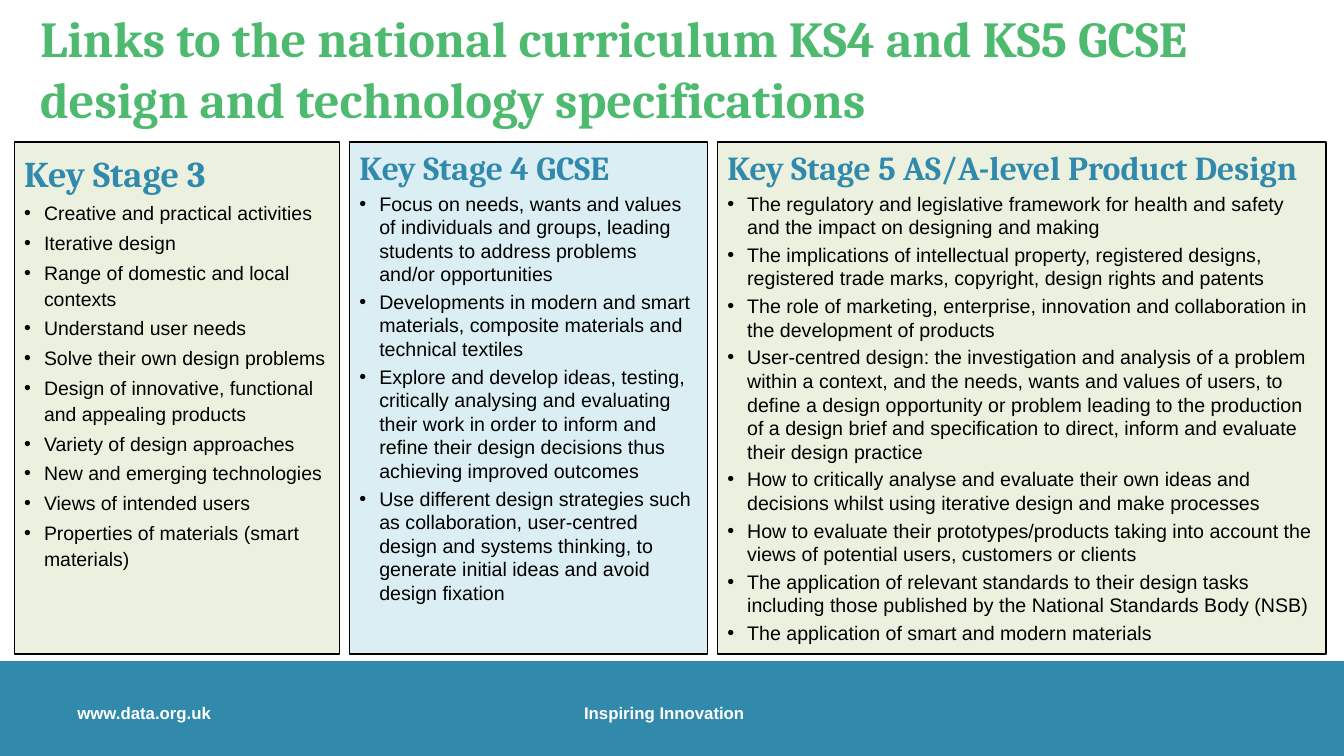
from dataclasses import dataclass

from lxml.etree import SubElement
from pptx import Presentation
from pptx.dml.color import RGBColor
from pptx.enum.shapes import MSO_SHAPE
from pptx.enum.text import MSO_ANCHOR, PP_ALIGN
from pptx.oxml.ns import qn
from pptx.util import Cm, Pt


@dataclass(frozen=True)
class Theme:
    blue: str = "318AAC"
    green: str = "4EBA6F"
    pale_green: str = "EBF1DE"
    pale_blue: str = "DBEEF4"
    black: str = "000000"
    white: str = "FFFFFF"
    heading_font: str = "Cambria"
    body_font: str = "Arial"
    title_size: float = 36
    heading_size: float = 24
    body_size: float = 14
    footer_size: float = 12


THEME = Theme()
SLIDE_WIDTH, SLIDE_HEIGHT = 33.87, 19.05
COLUMN_LEFT, COLUMN_TOP, COLUMN_HEIGHT, COLUMN_GAP = 0.36, 3.58, 12.9, 0.25
BULLET_INDENT = 0.5

COLUMNS = [
    dict(
        width=8.2, fill=THEME.pale_green, heading="Key Stage 3",
        heading_size=25.9, body_size=13.9, line_spacing=1.1,
        points=[
            "Creative and practical activities",
            "Iterative design",
            "Range of domestic and local contexts",
            "Understand user needs",
            "Solve their own design problems",
            "Design of innovative, functional and appealing products",
            "Variety of design approaches",
            "New and emerging technologies",
            "Views of intended users",
            "Properties of materials (smart materials)",
        ],
    ),
    dict(
        width=9.02, fill=THEME.pale_blue, heading="Key Stage 4 GCSE",
        points=[
            "Focus on needs, wants and values of individuals and groups, leading students to "
            "address problems and/or opportunities",
            "Developments in modern and smart materials, composite materials and technical textiles",
            "Explore and develop ideas, testing, critically analysing and evaluating their work in "
            "order to inform and refine their design decisions thus achieving improved outcomes",
            "Use different design strategies such as collaboration, user-centred design and systems "
            "thinking, to generate initial ideas and avoid design fixation",
        ],
    ),
    dict(
        width=15.34, fill=THEME.pale_green, heading="Key Stage 5 AS/A-level Product Design",
        points=[
            "The regulatory and legislative framework for health and safety and the impact on "
            "designing and making",
            "The implications of intellectual property, registered designs, registered trade marks, "
            "copyright, design rights and patents",
            "The role of marketing, enterprise, innovation and collaboration in the development of "
            "products",
            "User-centred design: the investigation and analysis of a problem within a context, and "
            "the needs, wants and values of users, to define a design opportunity or problem leading "
            "to the production of a design brief and specification to direct, inform and evaluate "
            "their design practice",
            "How to critically analyse and evaluate their own ideas and decisions whilst using "
            "iterative design and make processes",
            "How to evaluate their prototypes/products taking into account the views of potential "
            "users, customers or clients",
            "The application of relevant standards to their design tasks including those published "
            "by the National Standards Body (NSB)",
            "The application of smart and modern materials",
        ],
    ),
]


def write_text(paragraph, text, *, font, size, color, bold=False, bullet=False,
               line_spacing=None, space_before=0):
    paragraph.alignment = PP_ALIGN.LEFT
    paragraph.space_before = Pt(space_before)
    if line_spacing:
        paragraph.line_spacing = line_spacing
    if bullet:
        properties = paragraph._p.get_or_add_pPr()
        properties.set("marL", str(Cm(BULLET_INDENT)))
        properties.set("indent", str(-Cm(BULLET_INDENT)))
        SubElement(properties, qn("a:buFont"), typeface=THEME.body_font)
        SubElement(properties, qn("a:buChar"), char="•")
    run = paragraph.add_run()
    run.text = text
    run.font.name = font
    run.font.size = Pt(size)
    run.font.bold = bold
    run.font.color.rgb = RGBColor.from_string(color)


def add_rectangle(slide, left, top, width, height, fill, line=None):
    shape = slide.shapes.add_shape(
        MSO_SHAPE.RECTANGLE, Cm(left), Cm(top), Cm(width), Cm(height))
    shape.shadow.inherit = False
    shape.fill.solid()
    shape.fill.fore_color.rgb = RGBColor.from_string(fill)
    if line:
        shape.line.color.rgb = RGBColor.from_string(line)
        shape.line.width = Pt(1)
    else:
        shape.line.fill.background()
    return shape


def add_label(slide, text, left, top, width, height, anchor=MSO_ANCHOR.TOP, **text_format):
    frame = slide.shapes.add_textbox(Cm(left), Cm(top), Cm(width), Cm(height)).text_frame
    frame.word_wrap = True
    frame.vertical_anchor = anchor
    write_text(frame.paragraphs[0], text, bold=True, **text_format)


def add_title(slide, left, top, width, height):
    add_label(slide, "Links to the national curriculum KS4 and KS5 GCSE design and technology "
              "specifications", left, top, width, height, anchor=MSO_ANCHOR.MIDDLE,
              font=THEME.heading_font, size=THEME.title_size, color=THEME.green)


def add_column(slide, left, top, width, height, *, fill, heading, points,
               heading_size=THEME.heading_size, body_size=THEME.body_size, line_spacing=None):
    frame = add_rectangle(slide, left, top, width, height, fill, THEME.black).text_frame
    frame.word_wrap = True
    frame.vertical_anchor = MSO_ANCHOR.TOP
    write_text(frame.paragraphs[0], heading, font=THEME.heading_font, size=heading_size,
               color=THEME.blue, bold=True, line_spacing=line_spacing)
    for point in points:
        write_text(frame.add_paragraph(), point, font=THEME.body_font, size=body_size,
                   color=THEME.black, bullet=True, line_spacing=line_spacing, space_before=3)


def add_columns(slide, left, top, height):
    for column in COLUMNS:
        add_column(slide, left, top, height=height, **column)
        left += column["width"] + COLUMN_GAP


def add_footer(slide, left, top, width, height):
    add_rectangle(slide, left, top, width, height, THEME.blue)
    for text, offset in (("www.data.org.uk", 1.7), ("Inspiring Innovation", 14.47)):
        add_label(slide, text, left + offset, top + 0.92, 5.77, 0.89,
                  font=THEME.body_font, size=THEME.footer_size, color=THEME.white)


def main():
    presentation = Presentation()
    presentation.slide_width = Cm(SLIDE_WIDTH)
    presentation.slide_height = Cm(SLIDE_HEIGHT)
    slide = presentation.slides.add_slide(presentation.slide_layouts[6])
    add_footer(slide, 0, 16.66, SLIDE_WIDTH, SLIDE_HEIGHT - 16.66)
    add_title(slide, 0.76, 0.76, 32, 1.9)
    add_columns(slide, COLUMN_LEFT, COLUMN_TOP, COLUMN_HEIGHT)
    presentation.save("out.pptx")


if __name__ == "__main__":
    main()
